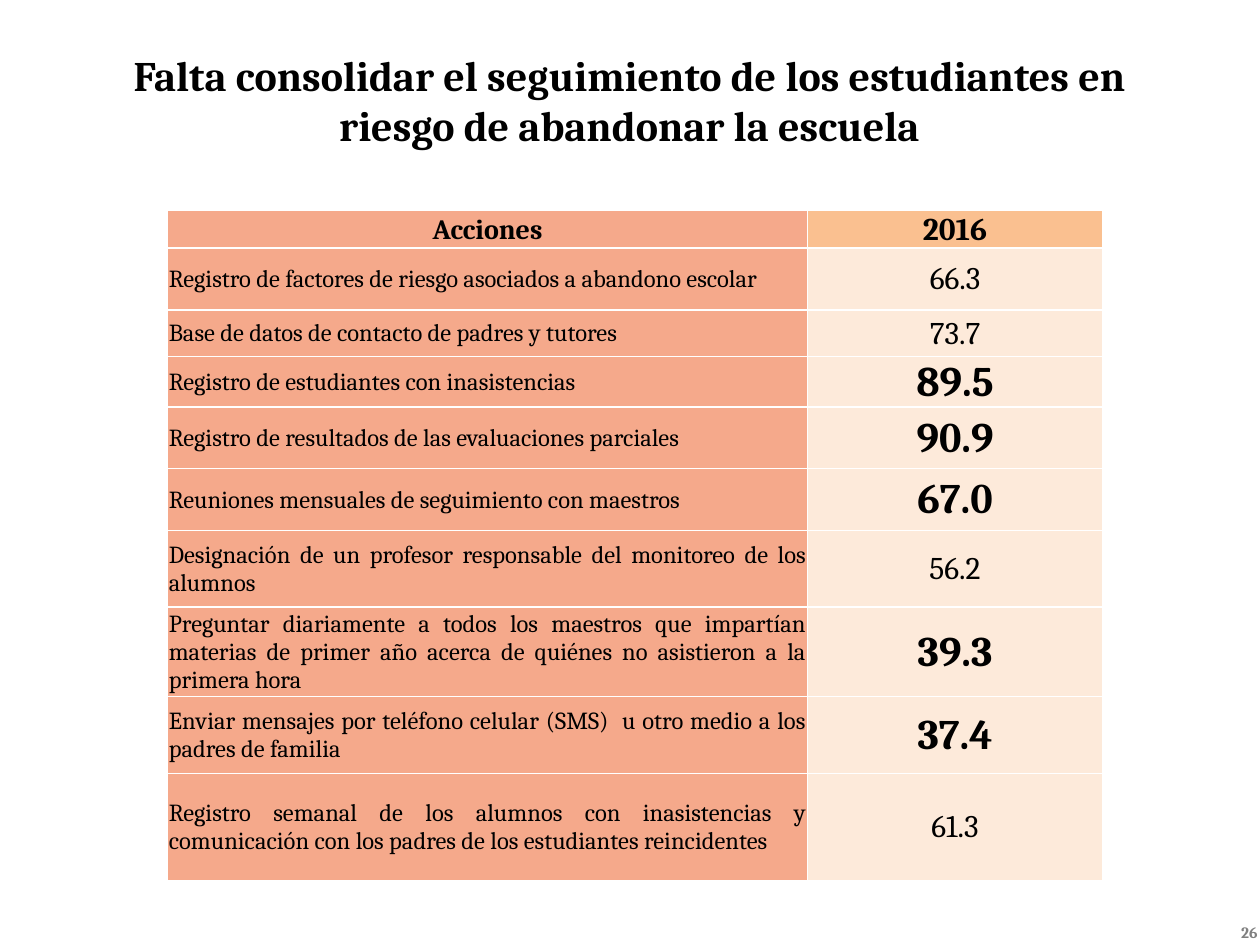
from dataclasses import dataclass

import lxml.etree
import pptx
import pptx.dml.color
import pptx.enum.text
import pptx.oxml.ns
import pptx.util

Inches = pptx.util.Inches
Pt = pptx.util.Pt
Align = pptx.enum.text.PP_ALIGN
Anchor = pptx.enum.text.MSO_ANCHOR

FONT = "Cambria"
COLORS = {
    "text": "000000",
    "page_number": "808080",
    "action": "F5A98B",
    "year": "FAC090",
    "value": "FDEADA",
    "border": "FFFFFF",
}


@dataclass
class Action:
    label: str
    value: str
    height: float
    highlight: bool = False


ACTIONS = [
    Action("Registro de factores de riesgo asociados a abandono escolar", "66.3", 0.49),
    Action("Base de datos de contacto de padres y tutores", "73.7", 0.37),
    Action("Registro de estudiantes con inasistencias", "89.5", 0.4, True),
    Action("Registro de resultados de las evaluaciones parciales", "90.9", 0.49, True),
    Action("Reuniones mensuales de seguimiento con maestros", "67.0", 0.49, True),
    Action("Designación de un profesor responsable del monitoreo de los alumnos", "56.2", 0.61),
    Action(
        "Preguntar diariamente a todos los maestros que impartían materias de "
        "primer año acerca de quiénes no asistieron a la primera hora",
        "39.3", 0.71, True,
    ),
    Action(
        "Enviar mensajes por teléfono celular (SMS)  u otro medio a los padres de familia",
        "37.4", 0.61, True,
    ),
    Action(
        "Registro semanal de los alumnos con inasistencias y comunicación con "
        "los padres de los estudiantes reincidentes",
        "61.3", 0.85,
    ),
]
HEADER_HEIGHT = 0.3
COLUMN_WIDTHS = (5.08, 2.34)


def rgb(name: str) -> pptx.dml.color.RGBColor:
    return pptx.dml.color.RGBColor.from_string(COLORS[name])


def write(tf, text: str, size: float, bold: bool, align, color: str = "text") -> None:
    tf.text = text
    p = tf.paragraphs[0]
    p.alignment = align
    r = p.runs[0]
    r.font.name = FONT
    r.font.size = Pt(size)
    r.font.bold = bold
    r.font.color.rgb = rgb(color)


def add_borders(cell) -> None:
    qn = pptx.oxml.ns.qn
    tc_pr = cell._tc.get_or_add_tcPr()
    for i, side in enumerate(("lnL", "lnR", "lnT", "lnB")):
        ln = lxml.etree.Element(qn(f"a:{side}"), w=str(Pt(1)))
        fill = lxml.etree.SubElement(ln, qn("a:solidFill"))
        lxml.etree.SubElement(fill, qn("a:srgbClr"), val=COLORS["border"])
        tc_pr.insert(i, ln)


def fill_cell(cell, text: str, size: float, bold: bool, align, fill: str) -> None:
    write(cell.text_frame, text, size, bold, align)
    cell.vertical_anchor = Anchor.MIDDLE
    cell.margin_left = cell.margin_right = cell.margin_top = Inches(0.01)
    cell.margin_bottom = 0
    cell.fill.solid()
    cell.fill.fore_color.rgb = rgb(fill)
    add_borders(cell)


def add_title(s) -> None:
    sp = s.shapes.title
    sp.left, sp.top, sp.width, sp.height = map(Inches, (0.83, 0.34, 8.33, 0.91))
    tf = sp.text_frame
    write(
        tf,
        "Falta consolidar el seguimiento de los estudiantes en riesgo de abandonar la escuela",
        24, True, Align.CENTER,
    )
    tf.word_wrap = True
    tf.auto_size = pptx.enum.text.MSO_AUTO_SIZE.NONE
    tf.vertical_anchor = Anchor.TOP


def add_actions_table(s) -> None:
    heights = [HEADER_HEIGHT] + [action.height for action in ACTIONS]
    table = s.shapes.add_table(
        len(heights), len(COLUMN_WIDTHS), Inches(1.33), Inches(1.67),
        Inches(sum(COLUMN_WIDTHS)), Inches(sum(heights)),
    ).table
    table.horz_banding = False
    for column, width in zip(table.columns, COLUMN_WIDTHS):
        column.width = Inches(width)
    for row, height in zip(table.rows, heights):
        row.height = Inches(height)

    fill_cell(table.cell(0, 0), "Acciones", 16, True, Align.CENTER, "action")
    fill_cell(table.cell(0, 1), "2016", 18, True, Align.CENTER, "year")
    for i, action in enumerate(ACTIONS, start=1):
        size = 24 if action.highlight else 18
        fill_cell(table.cell(i, 0), action.label, 14, False, Align.JUSTIFY, "action")
        fill_cell(table.cell(i, 1), action.value, size, action.highlight, Align.CENTER, "value")


def add_page_number(s) -> None:
    sp = s.shapes.add_textbox(Inches(7.75), Inches(7.29), Inches(2.33), Inches(0.22))
    tf = sp.text_frame
    write(tf, "26", 9, True, Align.RIGHT, "page_number")
    tf.word_wrap = True
    tf.vertical_anchor = Anchor.MIDDLE


def main() -> None:
    prs = pptx.Presentation()
    prs.slide_width = Inches(10)
    prs.slide_height = Inches(7.5)
    s = prs.slides.add_slide(prs.slide_layouts[5])
    add_title(s)
    add_actions_table(s)
    add_page_number(s)
    prs.save("out.pptx")


if __name__ == "__main__":
    main()
